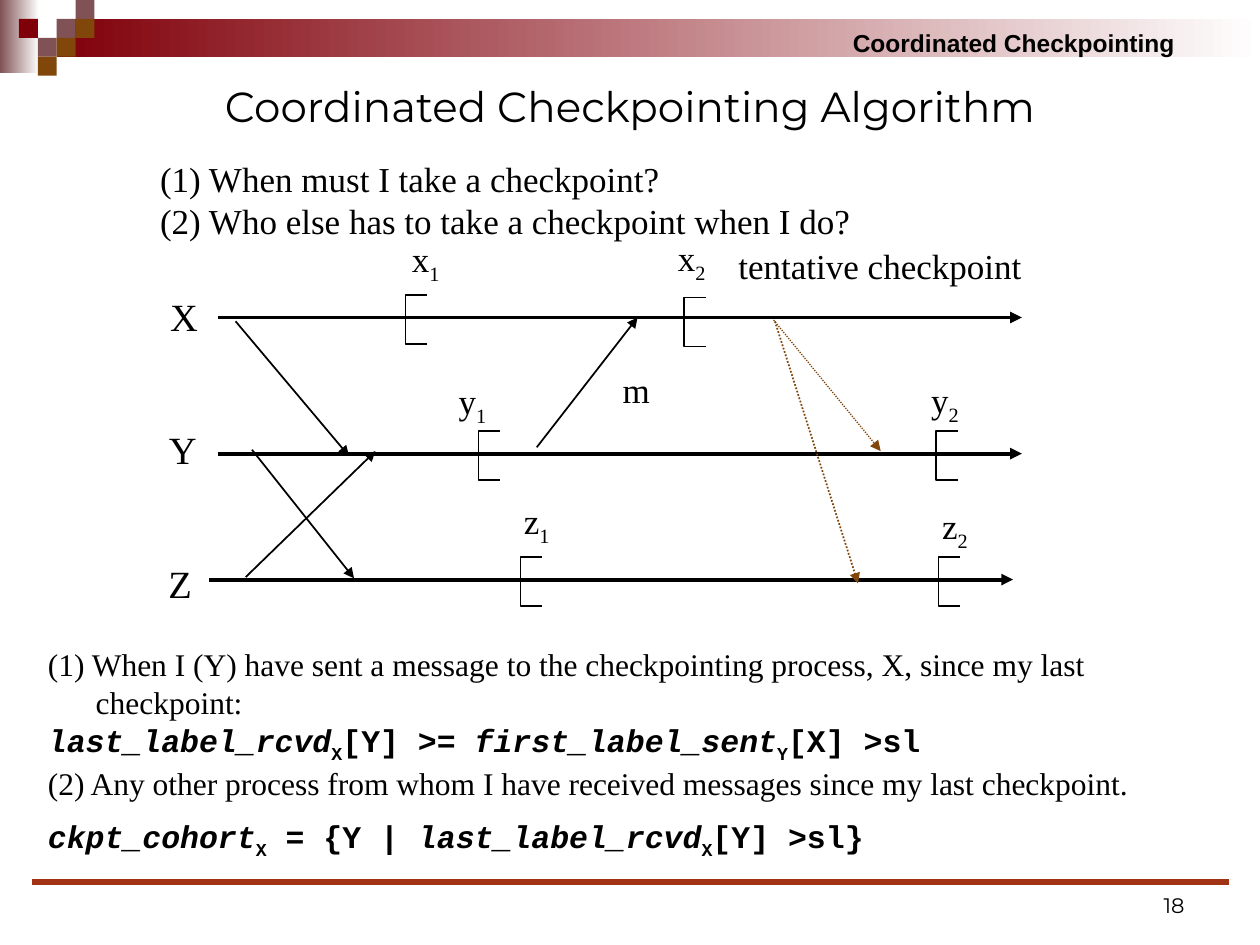
from lxml.etree import SubElement
from pptx import Presentation
from pptx.dml.color import RGBColor
from pptx.enum.dml import MSO_LINE
from pptx.enum.shapes import MSO_CONNECTOR, MSO_SHAPE
from pptx.enum.text import MSO_ANCHOR as ANCHOR, MSO_AUTO_SIZE, PP_ALIGN as ALIGN
from pptx.oxml.ns import qn
from pptx.util import Inches, Pt

BLACK, PLUM, RED, BROWN, RUST = "000000", "805255", "80000A", "81460A", "A13214"
SERIF, SANS, MONO, HEAD = "Times New Roman", "Arial", "Courier New", "Montserrat"
CODE = {"name": MONO, "bold": True}
VAR = {**CODE, "italic": True}
SUB = {**CODE, "sub": True}


def rgb(value):
    return RGBColor.from_string(value)


class Deck:
    def __init__(self, prs, layout):
        self.s = prs.slides.add_slide(prs.slide_layouts[layout])
        self.font = {"name": SERIF, "size": Pt(20), "bold": False, "italic": False}

    def block(self, x, y, w, h, color, fade=None):
        sp = self.s.shapes.add_shape(MSO_SHAPE.RECTANGLE, *map(Inches, (x, y, w, h)))
        sp.shadow.inherit = False
        sp.line.fill.background()
        if fade:
            sp.fill.gradient()
            sp.fill.gradient_angle = 0
            for stop, value in zip(sp.fill.gradient_stops, (color, fade)):
                stop.color.rgb = rgb(value)
        else:
            sp.fill.solid()
            sp.fill.fore_color.rgb = rgb(color)

    def line(self, start, end, color=BLACK, width=1, dash=None, arrow=True):
        sp = self.s.shapes.add_connector(MSO_CONNECTOR.STRAIGHT, *map(Inches, start + end))
        sp.line.color.rgb = rgb(color)
        sp.line.width = Pt(width)
        if dash:
            sp.line.dash_style = dash
        if arrow:
            SubElement(sp.line._get_or_add_ln(), qn("a:tailEnd"), type="triangle")
        SubElement(sp._element.spPr, qn("a:effectLst"))

    def bracket(self, x, y, w=0.17, h=0.39):
        points = [(x + w, y), (x, y), (x, y + h), (x + w, y + h)]
        points = [(Inches(px), Inches(py)) for px, py in points]
        fb = self.s.shapes.build_freeform(*points[0])
        fb.add_line_segments(points[1:], close=False)
        sp = fb.convert_to_shape()
        sp.shadow.inherit = False
        sp.fill.background()
        sp.line.color.rgb = rgb(BLACK)
        sp.line.width = Pt(0.75)

    def runs(self, p, parts, **style):
        for text, extra in parts:
            if text == "\n":
                p.add_line_break()
                continue
            r = p.add_run()
            r.text = text
            values = {**self.font, **style, **extra}
            if values.pop("sub", False):
                r._r.get_or_add_rPr().set("baseline", "-25000")
            for key, value in values.items():
                setattr(r.font, key, value)
            r.font.color.rgb = rgb(BLACK)

    def place(self, sp, box, anchor=ANCHOR.MIDDLE):
        for key, value in zip(("left", "top", "width", "height"), box):
            setattr(sp, key, Inches(value))
        tf = sp.text_frame
        frame = {"word_wrap": True, "auto_size": MSO_AUTO_SIZE.NONE, "vertical_anchor": anchor}
        for key, value in frame.items():
            setattr(tf, key, value)
        return tf

    def title(self, box, text):
        p = self.place(self.s.shapes.title, box).paragraphs[0]
        p.alignment = ALIGN.CENTER
        self.runs(p, [(text, {})], name=HEAD, size=Pt(24))

    def items(self, idx, box, paragraphs, size):
        tf = self.place(self.s.placeholders[idx], box)
        for i, (parts, before, hang) in enumerate(paragraphs):
            p = tf.paragraphs[0] if i == 0 else tf.add_paragraph()
            pPr = p._p.get_or_add_pPr()
            pPr.set("marL", str(Inches(hang)))
            pPr.set("indent", str(-Inches(hang)))
            SubElement(pPr, qn("a:buNone"))
            p.space_before = Pt(before)
            self.runs(p, parts, size=Pt(size))

    def text(self, box, parts, align=ALIGN.CENTER, anchor=ANCHOR.MIDDLE, inset=True, **style):
        tf = self.place(self.s.shapes.add_textbox(0, 0, 0, 0), box, anchor)
        if not inset:
            for side in ("left", "top", "right", "bottom"):
                setattr(tf, f"margin_{side}", 0)
        tf.paragraphs[0].alignment = align
        self.runs(tf.paragraphs[0], parts, **style)

    def label(self, x, y, text, sub="", w=0.3, h=0.33, size=20):
        parts = [(text, {})] + ([(sub, {"sub": True})] if sub else [])
        self.text((x, y, w, h), parts, inset=False, size=Pt(size))


def main():
    prs = Presentation()
    prs.slide_width, prs.slide_height = Inches(10), Inches(7.5)
    d = Deck(prs, 3)

    d.block(0, 0, 0.31, 0.58, PLUM, "FFFFFF")
    d.block(0.45, 0.15, 9.55, 0.3, RED, "FFFFFF")
    tile = 0.15
    for col, row, color in [(3, 1, PLUM), (4, 0, PLUM), (4, 1, BROWN), (2, 2, PLUM),
                            (1, 1, RED), (3, 2, BROWN), (2, 3, BROWN)]:
        d.block(col * tile, row * tile, tile, tile, color)
    d.line((0.25, 7), (9.75, 7), RUST, 3, arrow=False)
    d.text((6.67, 0.17, 2.83, 0.33), [("Coordinated Checkpointing", {})], ALIGN.LEFT,
           ANCHOR.TOP, name=SANS, size=Pt(14), bold=True)
    d.text((7.17, 6.83, 2.33, 0.5), [("18", {})], ALIGN.RIGHT, ANCHOR.BOTTOM,
           name=HEAD, size=Pt(12))

    d.title((0.5, 0.5, 9, 0.67), "Coordinated Checkpointing Algorithm")
    d.items(1, (1.17, 1.17, 5.76, 0.83), [
        ([("(1) When must I take a checkpoint?", {})], 0, 0),
        ([("(2) Who else has to take a checkpoint when I do?", {})], 0, 0),
    ], 20)
    d.items(2, (0.28, 5.1, 9.54, 1.75), [
        ([("(1) When I (Y) have sent a message to the checkpointing process, X, since my last", {}),
          ("\n", {}), ("checkpoint:", {})], 0, 0.38),
        ([("last_label_rcvd", VAR), ("X", SUB), ("[Y] >= ", CODE),
          ("first_label_sent", VAR), ("Y", SUB), ("[X] >sl", CODE)], 0, 0),
        ([("(2) Any other process from whom I have received messages since my last checkpoint.", {})],
         0, 0),
        ([("ckpt_cohort", VAR), ("X", SUB), (" = {Y | ", CODE),
          ("last_label_rcvd", VAR), ("X", SUB), ("[Y] >sl}", CODE)], 9, 0),
    ], 18)

    for name, x, y, start, axis in [("X", 1.31, 2.32, 1.73, 2.52), ("Y", 1.3, 3.38, 1.73, 3.6),
                                    ("Z", 1.28, 4.44, 1.66, 4.6)]:
        d.label(x, y, name, h=0.37, size=22)
        d.line((start, axis), (start + 6.38, axis), width=2.25)

    for name, sub, x, y, left, top in [
        ("x", "1", 3.23, 1.91, 3.22, 2.34), ("x", "2", 5.34, 1.9, 5.43, 2.36),
        ("y", "1", 3.6, 3.04, 3.8, 3.42), ("y", "2", 7.35, 3.03, 7.43, 3.42),
        ("z", "1", 4.11, 3.99, 4.13, 4.42), ("z", "2", 7.43, 4.03, 7.45, 4.42),
    ]:
        d.label(x, y, name, sub)
        d.bracket(left, top)

    d.label(5.73, 1.94, "tentative checkpoint", w=2.51)
    d.label(4.9, 2.93, "m")
    for start, end in [((1.95, 4.58), (2.98, 3.58)), ((4.26, 3.55), (5.06, 2.52)),
                       ((1.87, 2.55), (2.77, 3.62)), ((2, 3.57), (2.81, 4.59))]:
        d.line(start, end)
    d.line((6.15, 2.55), (6.81, 4.63), BROWN, 1, MSO_LINE.ROUND_DOT)
    d.line((6.14, 2.54), (6.99, 3.58), BROWN, 0.75, MSO_LINE.ROUND_DOT)

    prs.save("out.pptx")


if __name__ == "__main__":
    main()
